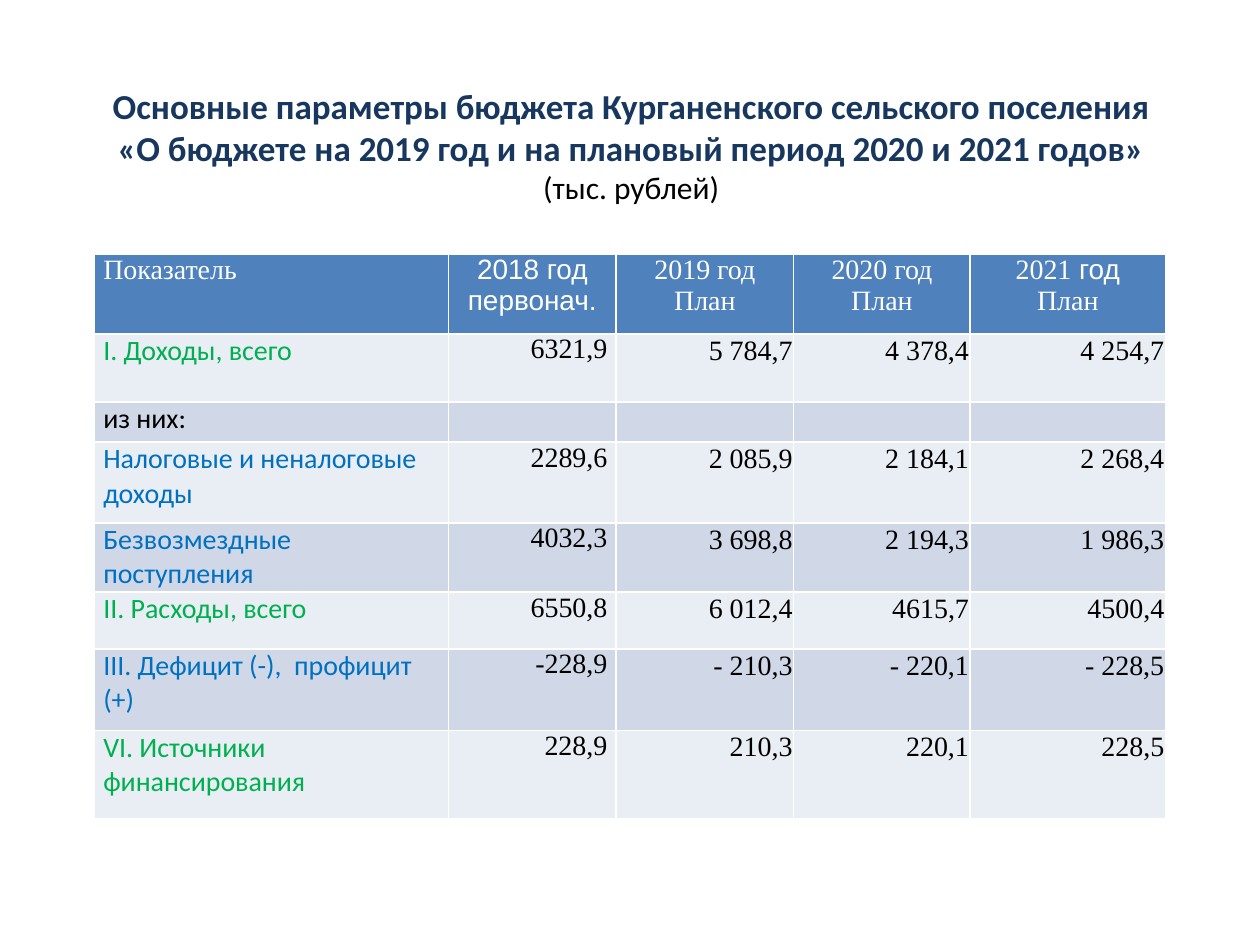
from lxml import etree
from pptx import Presentation
from pptx import util as u
from pptx.dml.color import RGBColor
from pptx.enum import text
from pptx.oxml.ns import qn

COLORS = {
    "navy": "17375E", "black": "000000", "white": "FFFFFF",
    "green": "00B050", "blue": "0070C0",
    "header": "4F81BD", "light": "E9EDF4", "dark": "D0D8E8",
}
SANS, SERIF, ARIAL = "Calibri", "Times New Roman", "Arial"
LEFT, CENTER, RIGHT = text.PP_ALIGN.LEFT, text.PP_ALIGN.CENTER, text.PP_ALIGN.RIGHT

TITLE = [
    ("Основные параметры бюджета Курганенского сельского поселения", 20, "navy", True),
    ("«О бюджете на 2019 год и на плановый период 2020 и 2021 годов»", 20, "navy", True),
    ("(тыс. рублей)", 18, "black", False),
]
# One cell is a list of paragraphs, one paragraph a list of (text, font) runs
HEADER = [
    [[("Показатель", SERIF)]],
    [[("2018 год первонач.", ARIAL)]],
    [[("2019 год", SERIF)], [("План", SERIF)]],
    [[("2020 год", SERIF)], [("План", SERIF)]],
    [[("2021", SERIF), (" год", ARIAL)], [("План", SERIF)]],
]
ROWS = [
    ("I. Доходы, всего", "green", ["6321,9", "5 784,7", "4 378,4", "4 254,7"]),
    ("из них:", "black", ["", "", "", ""]),
    ("Налоговые и неналоговые доходы", "blue", ["2289,6", "2 085,9", "2 184,1", "2 268,4"]),
    ("Безвозмездные поступления", "blue", ["4032,3", "3 698,8", "2 194,3", "1 986,3"]),
    ("II. Расходы, всего", "green", ["6550,8", "6 012,4", "4615,7", "4500,4"]),
    ("III. Дефицит (-),  профицит (+)", "blue", ["-228,9", "- 210,3", "- 220,1", "- 228,5"]),
    ("VI. Источники финансирования", "green", ["228,9", "210,3", "220,1", "228,5"]),
]
COL_WIDTHS = [2.81, 1.33, 1.41, 1.4, 1.55]
ROW_HEIGHTS = [0.63, 0.54, 0.32, 0.64, 0.55, 0.45, 0.65, 0.7]
TABLE_LEFT, TABLE_TOP = 0.75, 2.02


def rgb(name):
    return RGBColor.from_string(COLORS[name])


def add_title(s):
    sp = s.shapes.add_textbox(u.Inches(0.51), u.Inches(0.44), u.Inches(9), u.Inches(1.42))
    tf = sp.text_frame
    tf.word_wrap = True
    tf.vertical_anchor = text.MSO_ANCHOR.MIDDLE
    p = tf.paragraphs[0]
    p.alignment = CENTER
    p.font.name = SANS
    for i, (line, size, color, bold) in enumerate(TITLE):
        if i:
            p.add_line_break()
        r = p.add_run()
        r.text = line
        r.font.name, r.font.size, r.font.bold = SANS, u.Pt(size), bold
        r.font.color.rgb = rgb(color)


def set_borders(cell):
    tc_pr = cell._tc.get_or_add_tcPr()
    for i, side in enumerate(("lnL", "lnR", "lnT", "lnB")):
        ln = etree.Element(qn(f"a:{side}"), w=str(u.Pt(1)))
        fill = etree.SubElement(ln, qn("a:solidFill"))
        etree.SubElement(fill, qn("a:srgbClr"), val=COLORS["white"])
        tc_pr.insert(i, ln)


def fill_cell(cell, paragraphs, color, align, back, side=0.07, top=0):
    cell.margin_left = cell.margin_right = u.Inches(side)
    cell.margin_top, cell.margin_bottom = u.Inches(top), 0
    cell.fill.solid()
    cell.fill.fore_color.rgb = rgb(back)
    set_borders(cell)
    tf = cell.text_frame
    for i, runs in enumerate(paragraphs):
        p = tf.add_paragraph() if i else tf.paragraphs[0]
        p.alignment = align
        p.font.size, p.font.bold = u.Pt(16), False
        p.font.color.rgb = rgb(color)
        for content, font in runs:
            if content:
                r = p.add_run()
                r.text = content
                r.font.name, r.font.size, r.font.bold = font, u.Pt(16), False
                r.font.color.rgb = rgb(color)


def add_budget_table(s):
    frame = s.shapes.add_table(
        len(ROW_HEIGHTS), len(COL_WIDTHS), u.Inches(TABLE_LEFT), u.Inches(TABLE_TOP),
        u.Inches(sum(COL_WIDTHS)), u.Inches(sum(ROW_HEIGHTS)))
    table = frame.table
    table.first_row = table.horz_banding = False
    for column, width in zip(table.columns, COL_WIDTHS):
        column.width = u.Inches(width)
    for row, height in zip(table.rows, ROW_HEIGHTS):
        row.height = u.Inches(height)

    for c, paragraphs in enumerate(HEADER):
        fill_cell(table.cell(0, c), paragraphs, "white", CENTER if c else LEFT, "header")
    for r, (label, color, values) in enumerate(ROWS, 1):
        back = "light" if r % 2 else "dark"
        fill_cell(table.cell(r, 0), [[(label, SANS)]], color, LEFT, back)
        for c, value in enumerate(values, 1):
            side, top = (0.07, 0) if c == 1 else (0.01, 0.01)
            fill_cell(table.cell(r, c), [[(value, SERIF)]], "black", RIGHT, back, side, top)


def main():
    prs = Presentation()
    prs.slide_width, prs.slide_height = u.Inches(10), u.Inches(7.5)
    s = prs.slides.add_slide(prs.slide_layouts[6])
    add_title(s)
    add_budget_table(s)
    prs.save("out.pptx")


if __name__ == "__main__":
    main()
